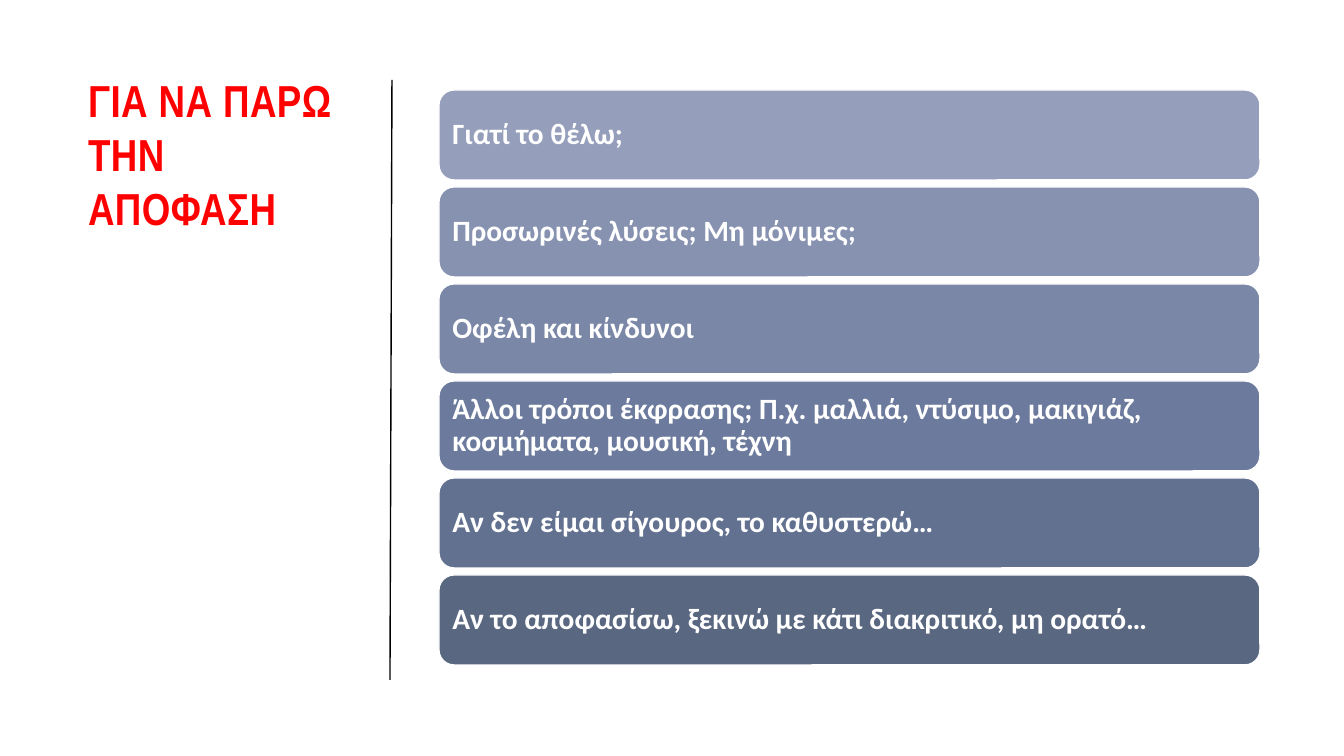
from lxml import etree
from pptx import Presentation
from pptx.dml.color import RGBColor
from pptx.enum.shapes import MSO_CONNECTOR, MSO_SHAPE
from pptx.enum.text import MSO_ANCHOR, MSO_AUTO_SIZE, PP_ALIGN
from pptx.oxml.ns import qn
from pptx.util import Emu, Pt

STRAIGHT = MSO_CONNECTOR.STRAIGHT
ROUNDED = MSO_SHAPE.ROUNDED_RECTANGLE
TOP, MIDDLE = MSO_ANCHOR.TOP, MSO_ANCHOR.MIDDLE
LEFT = PP_ALIGN.LEFT
NO_AUTOFIT = MSO_AUTO_SIZE.NONE

SLIDE_WIDTH, SLIDE_HEIGHT = 1344, 756
EMU_PER_PX = 12192000 / SLIDE_WIDTH

THEME = {
    "title": {"font": "Arial Narrow", "size": 32, "color": "FF0000"},
    "bar": {"font": "Calibri", "size": 21, "color": "FFFFFF"},
    "divider": "000000",
    "bar_outline": "FFFFFF",
    "bar_fills": ["959EBB", "8792B1", "7A87A7", "6C7B9D", "627190", "596781"],
}

QUESTIONS = [
    "Γιατί το θέλω;",
    "Προσωρινές λύσεις; Μη μόνιμες;",
    "Οφέλη και κίνδυνοι",
    "Άλλοι τρόποι έκφρασης; Π.χ. μαλλιά, ντύσιμο, μακιγιάζ, κοσμήματα, μουσική, τέχνη",
    "Αν δεν είμαι σίγουρος, το καθυστερώ…",
    "Αν το αποφασίσω, ξεκινώ με κάτι διακριτικό, μη ορατό…",
]
BAR_LEFT, BAR_TOP, BAR_WIDTH, BAR_HEIGHT, BAR_PITCH = 439, 90, 821, 90, 97
BAR_INSET = 9


def px(length):
    return Emu(round(length * EMU_PER_PX))


def write_text(shape, text, style, anchor, line_spacing):
    """Fill a shape with one bold, left-aligned run and return the run."""
    frame = shape.text_frame
    frame.word_wrap = True
    frame.auto_size = NO_AUTOFIT
    frame.vertical_anchor = anchor
    paragraph = frame.paragraphs[0]
    paragraph.alignment = LEFT
    paragraph.line_spacing = line_spacing
    run = paragraph.add_run()
    run.text = text
    run.font.name = style["font"]
    run.font.size = Pt(style["size"])
    run.font.bold = True
    run.font.color.rgb = RGBColor.from_string(style["color"])
    return run


presentation = Presentation()
presentation.slide_width = px(SLIDE_WIDTH)
presentation.slide_height = px(SLIDE_HEIGHT)
title_only = presentation.slide_layouts[5]
slide = presentation.slides.add_slide(title_only)

# Title
title = slide.shapes.title
title.left, title.top, title.width, title.height = px(78), px(68), px(278), px(495)
title_run = write_text(title, "ΓΙΑ ΝΑ ΠΑΡΩ ΤΗΝ ΑΠΟΦΑΣΗ", THEME["title"], TOP, 1.0)
title_run.font._element.set("spc", "30")

# Divider
divider = slide.shapes.add_connector(STRAIGHT, px(390), px(680), px(392), px(80))
divider.line.color.rgb = RGBColor.from_string(THEME["divider"])
divider.line.width = Pt(1)
etree.SubElement(divider._element.spPr, qn("a:effectLst"))

# Question bars
for index, (question, fill) in enumerate(zip(QUESTIONS, THEME["bar_fills"])):
    bar = slide.shapes.add_shape(
        ROUNDED, px(BAR_LEFT), px(BAR_TOP + index * BAR_PITCH), px(BAR_WIDTH), px(BAR_HEIGHT)
    )
    bar.shadow.inherit = False
    bar.fill.solid()
    bar.fill.fore_color.rgb = RGBColor.from_string(fill)
    bar.line.color.rgb = RGBColor.from_string(THEME["bar_outline"])
    bar.line.width = Pt(1)
    frame = bar.text_frame
    frame.margin_left = frame.margin_right = px(BAR_INSET)
    frame.margin_top = frame.margin_bottom = px(BAR_INSET)
    write_text(bar, question, THEME["bar"], MIDDLE, 0.9)

presentation.save("out.pptx")
